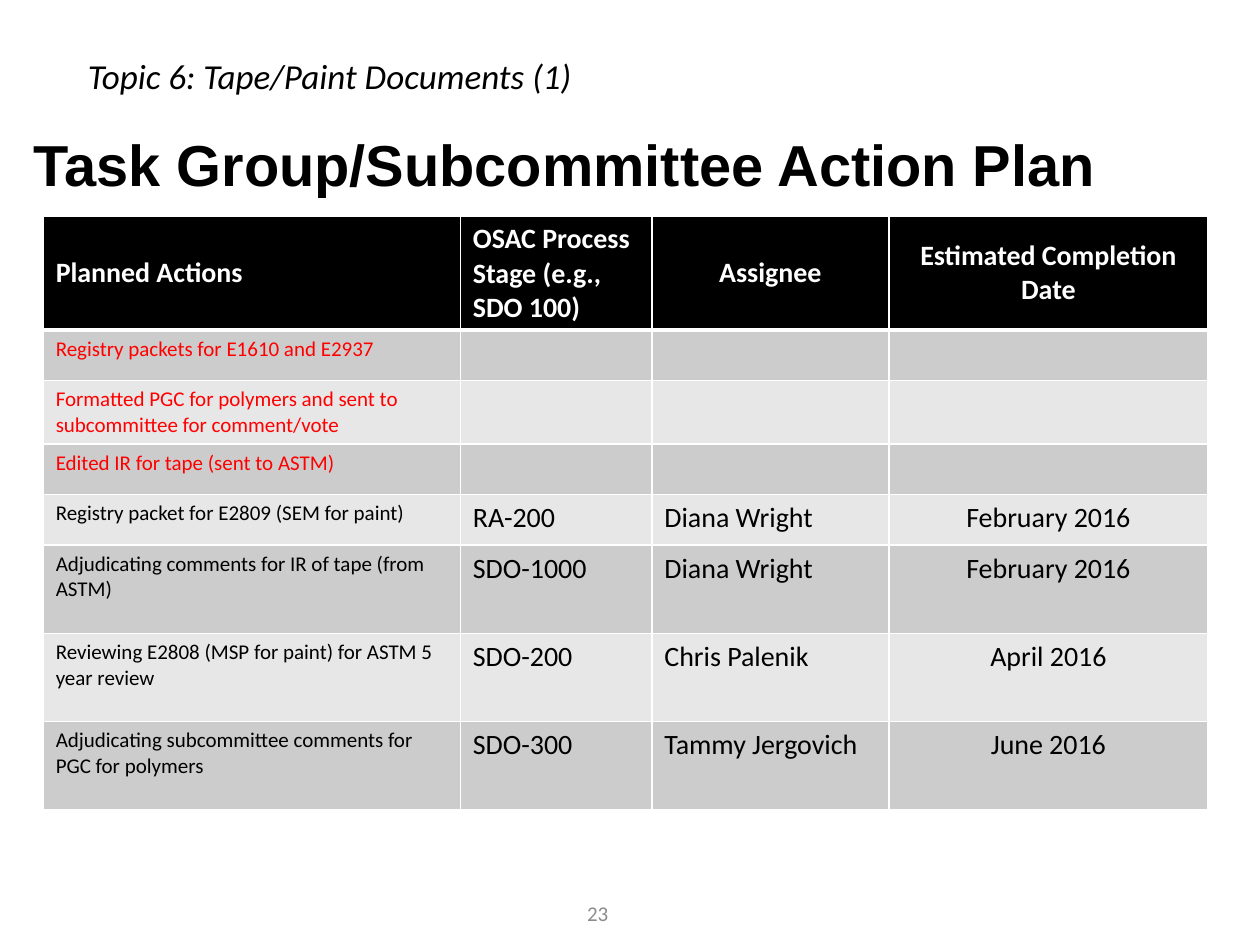
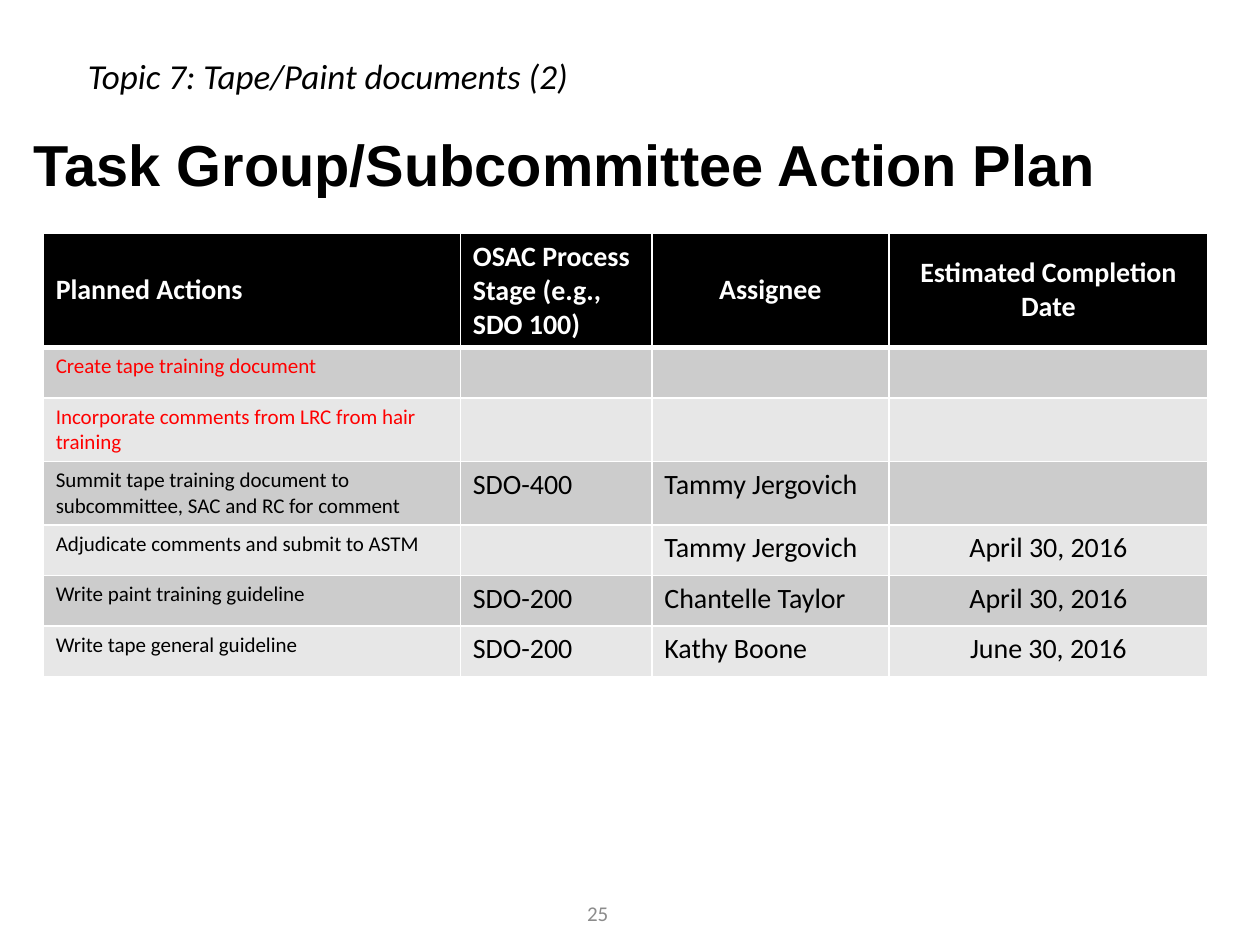
from lxml import etree
from pptx import Presentation
from pptx import oxml
from pptx.dml.color import RGBColor
from pptx.enum import text as t
from pptx.util import Cm, Pt

BLACK = RGBColor(0x00, 0x00, 0x00)
WHITE = RGBColor(0xFF, 0xFF, 0xFF)
RED = RGBColor(0xFF, 0x00, 0x00)
GREY = RGBColor(0x8C, 0x8C, 0x8C)
BANDS = (RGBColor(0xCC, 0xCC, 0xCC), RGBColor(0xE7, 0xE7, 0xE7))
LEFT, MID = t.PP_ALIGN.LEFT, t.PP_ALIGN.CENTER
CENTER = t.MSO_ANCHOR.MIDDLE

TOPIC = dict(name="Calibri", size=Pt(20), italic=True)
TITLE = dict(name="Arial", size=Pt(33), bold=True)
FOOT = dict(name="Calibri", size=Pt(12))
HEAD = dict(name="Calibri", size=Pt(16), bold=True)
TASK = dict(name="Calibri", size=Pt(12), bold=False)
BODY = dict(name="Calibri", size=Pt(16), bold=False)

COLS = (8.41, 3.86, 4.78, 6.43)
TOP, ONE, TWO, TALL = 2.3, 1.02, 1.28, 1.78
HEADS = ("Planned Actions", "OSAC Process Stage (e.g., SDO 100)",
         "Assignee", "Estimated Completion Date")

PAGES = [
    dict(topic="Topic 6: Tape/Paint Documents (1)", page="23", top=4.35, rows=[
        (ONE, RED, "Registry packets for E1610 and E2937", "", "", ""),
        (TWO, RED, "Formatted PGC for polymers and sent to subcommittee for comment/vote",
         "", "", ""),
        (ONE, RED, "Edited IR for tape (sent to ASTM)", "", "", ""),
        (ONE, BLACK, "Registry packet for E2809 (SEM for paint)",
         "RA-200", "Diana Wright", "February 2016"),
        (TALL, BLACK, "Adjudicating comments for IR of tape (from ASTM)",
         "SDO-1000", "Diana Wright", "February 2016"),
        (TALL, BLACK, "Reviewing E2808 (MSP for paint) for ASTM 5 year review",
         "SDO-200", "Chris Palenik", "April 2016"),
        (TALL, BLACK, "Adjudicating subcommittee comments for PGC for polymers",
         "SDO-300", "Tammy Jergovich", "June 2016"),
    ]),
    dict(topic="Topic 7: Tape/Paint documents (2)", page="25", top=4.7, rows=[
        (ONE, RED, "Create tape training document", "", "", ""),
        (TWO, RED, "Incorporate comments from LRC from hair training", "", "", ""),
        (TWO, BLACK, "Summit tape training document to subcommittee, SAC and RC for comment",
         "SDO-400", "Tammy Jergovich", ""),
        (ONE, BLACK, "Adjudicate comments and submit to ASTM",
         "", "Tammy Jergovich", "April 30, 2016"),
        (ONE, BLACK, "Write paint training guideline",
         "SDO-200", "Chantelle Taylor", "April 30, 2016"),
        (ONE, BLACK, "Write tape general guideline",
         "SDO-200", "Kathy Boone", "June 30, 2016"),
    ]),
]


def write(frame, words, form, color, align=LEFT):
    """Put one styled paragraph in a text frame."""
    para = frame.paragraphs[0]
    para.alignment = align
    if words:
        run = para.add_run()
        run.text = words
        for key, value in form.items():
            setattr(run.font, key, value)
        run.font.color.rgb = color
    return para


def label(slide, box, words, form, color=BLACK, align=LEFT, anchor=CENTER):
    """Add a wrapped text box and return its paragraph."""
    frame = slide.shapes.add_textbox(*map(Cm, box)).text_frame
    frame.word_wrap = True
    frame.vertical_anchor = anchor
    return write(frame, words, form, color, align)


def edge(cell, base):
    """Draw white cell borders, with the given bottom width in points."""
    props = cell._tc.get_or_add_tcPr()
    for spot, (side, wide) in enumerate(zip("LRTB", (1, 1, 1, base))):
        line = etree.Element(oxml.ns.qn(f"a:ln{side}"), w=str(Pt(wide)))
        fill = etree.SubElement(line, oxml.ns.qn("a:solidFill"))
        etree.SubElement(fill, oxml.ns.qn("a:srgbClr"), val=str(WHITE))
        props.insert(spot, line)


def paint(cell, fill, base):
    """Fill and border one cell."""
    cell.fill.solid()
    cell.fill.fore_color.rgb = fill
    edge(cell, base)


def plan(slide, left, top, rows):
    """Build the action table with its top left corner at the given place."""
    highs = [TOP] + [row[0] for row in rows]
    box = (left, top, sum(COLS), sum(highs))
    grid = slide.shapes.add_table(len(highs), len(COLS), *map(Cm, box)).table
    for col, wide in zip(grid.columns, COLS):
        col.width = Cm(wide)
    for row, high in zip(grid.rows, highs):
        row.height = Cm(high)
    for c, words in enumerate(HEADS):
        cell = grid.cell(0, c)
        paint(cell, BLACK, 3)
        cell.vertical_anchor = CENTER
        write(cell.text_frame, words, HEAD, WHITE, MID if c > 1 else LEFT)
    for r, (_, color, *texts) in enumerate(rows, 1):
        for c, words in enumerate(texts):
            cell = grid.cell(r, c)
            paint(cell, BANDS[(r - 1) % 2], 3 if r == 0 else 1)
            write(cell.text_frame, words, BODY if c else TASK, color,
                  MID if c == 3 else LEFT)


def build(deck, topic, page, top, rows):
    """Add one action plan slide."""
    slide = deck.slides.add_slide(deck.slide_layouts[6])
    label(slide, (1.52, 0.97, 13.8, 1.12), topic, TOPIC, anchor=t.MSO_ANCHOR.TOP)
    label(slide, (9.2, 17.9, 5.7, 1.02), page, FOOT, GREY, MID)
    title = label(slide, (0.43, 1.55, 24.97, 3.68),
                  "Task Group/Subcommittee Action Plan", TITLE)
    title.line_spacing = 0.9
    plan(slide, 0.87, top, rows)


def main():
    """Build and save the deck."""
    deck = Presentation()
    deck.slide_width, deck.slide_height = Cm(25.4), Cm(19.05)
    for page in PAGES:
        build(deck, **page)
    deck.save("out.pptx")


if __name__ == "__main__":
    main()
